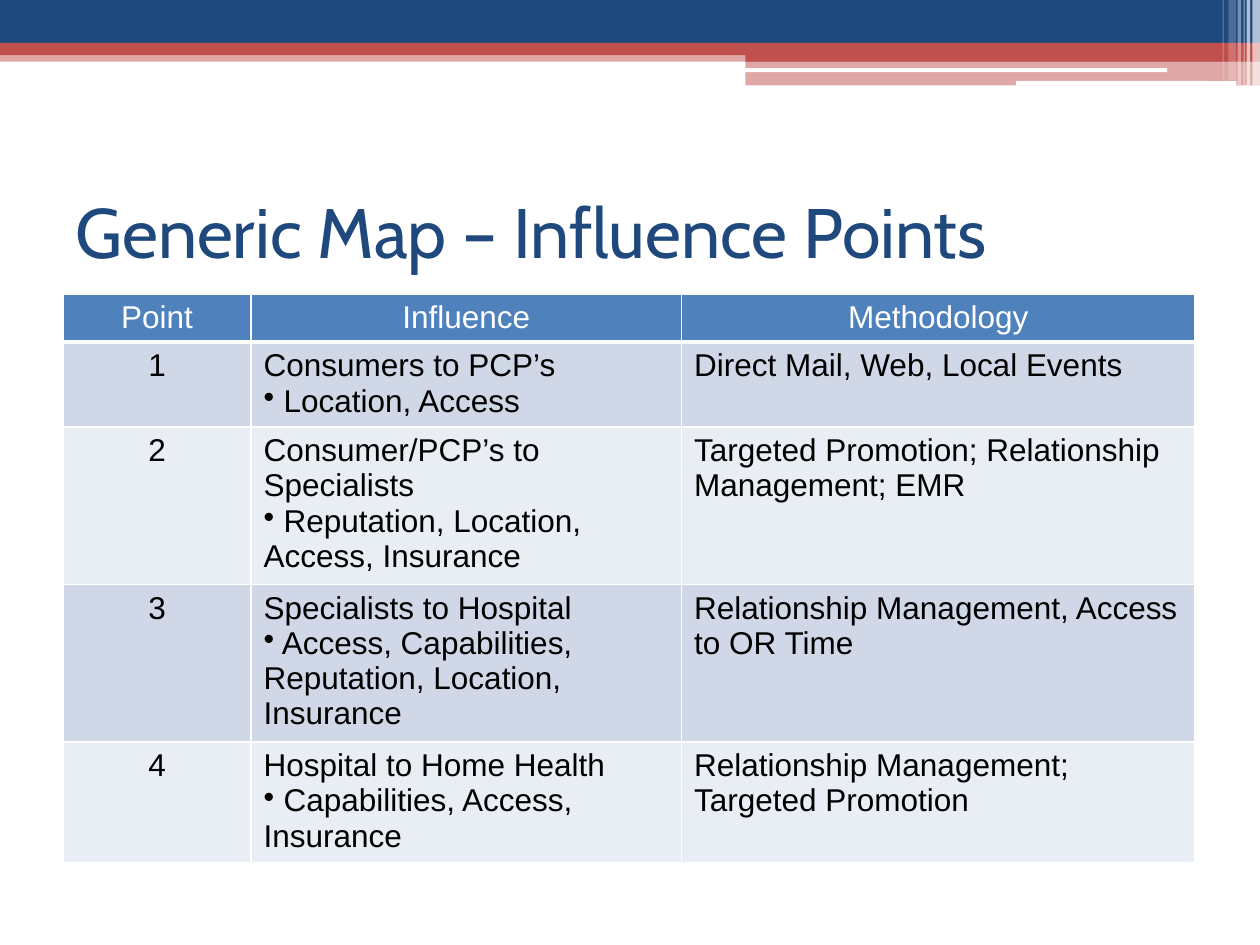
from dataclasses import dataclass

from lxml.etree import SubElement
from pptx import Presentation
from pptx.dml.color import RGBColor
from pptx.enum.shapes import MSO_SHAPE as Preset
from pptx.enum.text import MSO_ANCHOR as Anchor, MSO_AUTO_SIZE as AutoSize, PP_ALIGN as Align
from pptx.oxml.ns import qn
from pptx.util import Pt

COLORS = {
    "navy": "1F497D",
    "red": "C0504D",
    "white": "FFFFFF",
    "black": "000000",
    "header": "4F81BD",
    "band_dark": "D0D8E8",
    "band_light": "E9EDF4",
}


@dataclass(frozen=True)
class Bar:
    left: float
    top: float
    width: float
    height: float
    color: str
    opacity: int = 100
    preset: Preset = Preset.RECTANGLE


@dataclass(frozen=True)
class InfluencePoint:
    influence: str
    factors: str
    methodology: str
    height: float


BANNER = [
    Bar(0, 28.8, 720, 6.5, "red", 50),
    Bar(0, 0, 720, 24.5, "navy"),
    Bar(0, 24.5, 720, 7, "red"),
    Bar(426, 28, 294, 7.2, "red"),
    Bar(426, 34.8, 294, 14, "red", 50),
    Bar(425.5, 39, 241.5, 2.2, "white", preset=Preset.ROUNDED_RECTANGLE),
    Bar(580.5, 46.3, 126, 2.7, "white", preset=Preset.ROUNDED_RECTANGLE),
]

# Upright stripes at the right edge: left, width, height, opacity
STRIPES = [
    Bar(left, 0, width, height, "white", opacity)
    for left, width, height, opacity in [
        (715.6, 4.4, 49, 65),
        (712.4, 2, 49, 65),
        (710.6, 0.7, 49, 60),
        (707.2, 2, 49, 40),
        (702, 4.3, 46, 20),
        (698.6, 0.7, 46, 30),
    ]
]

HEADINGS = ["Point", "Influence", "Methodology"]
COLUMN_WIDTHS = [107.5, 246, 293.5]
HEADER_HEIGHT = 27

POINTS = [
    InfluencePoint("Consumers to PCP’s", "Location, Access",
                   "Direct Mail, Web, Local Events", 48.5),
    InfluencePoint("Consumer/PCP’s to Specialists",
                   "Reputation, Location, Access, Insurance",
                   "Targeted Promotion; Relationship Management; EMR", 90),
    InfluencePoint("Specialists to Hospital",
                   "Access, Capabilities, Reputation, Location, Insurance",
                   "Relationship Management, Access to OR Time", 90),
    InfluencePoint("Hospital to Home Health", "Capabilities, Access, Insurance",
                   "Relationship Management; Targeted Promotion", 69),
]


def rgb(color: str) -> RGBColor:
    return RGBColor.from_string(COLORS[color])


def write(paragraph, text: str, *, size: float = 18, font: str = "Arial",
          color: str = "black", align: Align = Align.LEFT, bullet: bool = False) -> None:
    paragraph.alignment = align
    run = paragraph.add_run()
    run.text = f" {text}" if bullet else text
    run.font.size = Pt(size)
    run.font.name = font
    run.font.bold = False
    run.font.color.rgb = rgb(color)
    if bullet:
        properties = paragraph._p.get_or_add_pPr()
        properties.set("marL", "0")
        properties.set("indent", "0")
        SubElement(properties, qn("a:buChar"), char="•")


def draw_bar(slide, bar: Bar) -> None:
    shape = slide.shapes.add_shape(bar.preset, Pt(bar.left), Pt(bar.top),
                                   Pt(bar.width), Pt(bar.height))
    shape.shadow.inherit = False
    shape.line.fill.background()
    shape.fill.solid()
    shape.fill.fore_color.rgb = rgb(bar.color)
    if bar.opacity < 100:
        tint = shape.element.spPr.find(f"{qn('a:solidFill')}/{qn('a:srgbClr')}")
        SubElement(tint, qn("a:alpha"), val=str(bar.opacity * 1000))


def style_cell(cell, fill: str, bottom_border: float = 1) -> None:
    properties = cell._tc.get_or_add_tcPr()
    for side, width in {"L": 1, "R": 1, "T": 1, "B": bottom_border}.items():
        line = SubElement(properties, qn(f"a:ln{side}"), w=str(Pt(width)))
        paint = SubElement(line, qn("a:solidFill"))
        SubElement(paint, qn("a:srgbClr"), val=COLORS["white"])
    cell.fill.solid()
    cell.fill.fore_color.rgb = rgb(fill)


def draw_table(slide, points: list[InfluencePoint]) -> None:
    heights = [HEADER_HEIGHT] + [point.height for point in points]
    table = slide.shapes.add_table(
        len(heights), len(HEADINGS), Pt(36), Pt(168),
        Pt(sum(COLUMN_WIDTHS)), Pt(sum(heights))).table
    for column, width in zip(table.columns, COLUMN_WIDTHS):
        column.width = Pt(width)
    for row, height in zip(table.rows, heights):
        row.height = Pt(height)

    # Header row
    for cell, heading in zip(table.rows[0].cells, HEADINGS):
        style_cell(cell, "header", bottom_border=3)
        write(cell.text_frame.paragraphs[0], heading, color="white", align=Align.CENTER)

    # One banded row for each influence point
    for number, point in enumerate(points, start=1):
        cells = list(table.rows[number].cells)
        for cell in cells:
            style_cell(cell, "band_dark" if number % 2 else "band_light")
        number_frame, influence_frame, method_frame = (cell.text_frame for cell in cells)
        write(number_frame.paragraphs[0], str(number), align=Align.CENTER)
        write(influence_frame.paragraphs[0], point.influence)
        write(influence_frame.add_paragraph(), point.factors, bullet=True)
        write(method_frame.paragraphs[0], point.methodology)


def main() -> None:
    deck = Presentation()
    deck.slide_width, deck.slide_height = Pt(720), Pt(540)
    slide = deck.slides.add_slide(deck.slide_layouts[5])

    # Banner across the top
    for bar in BANNER + STRIPES:
        draw_bar(slide, bar)

    # Title
    title = slide.shapes.title
    title.left, title.top, title.width, title.height = Pt(36), Pt(90), Pt(648), Pt(84)
    title.text_frame.vertical_anchor = Anchor.MIDDLE
    title.text_frame.auto_size = AutoSize.NONE
    write(title.text_frame.paragraphs[0], "Generic Map – Influence Points",
          size=40, font="Cabin", color="navy")

    draw_table(slide, POINTS)
    deck.save("out.pptx")


if __name__ == "__main__":
    main()
